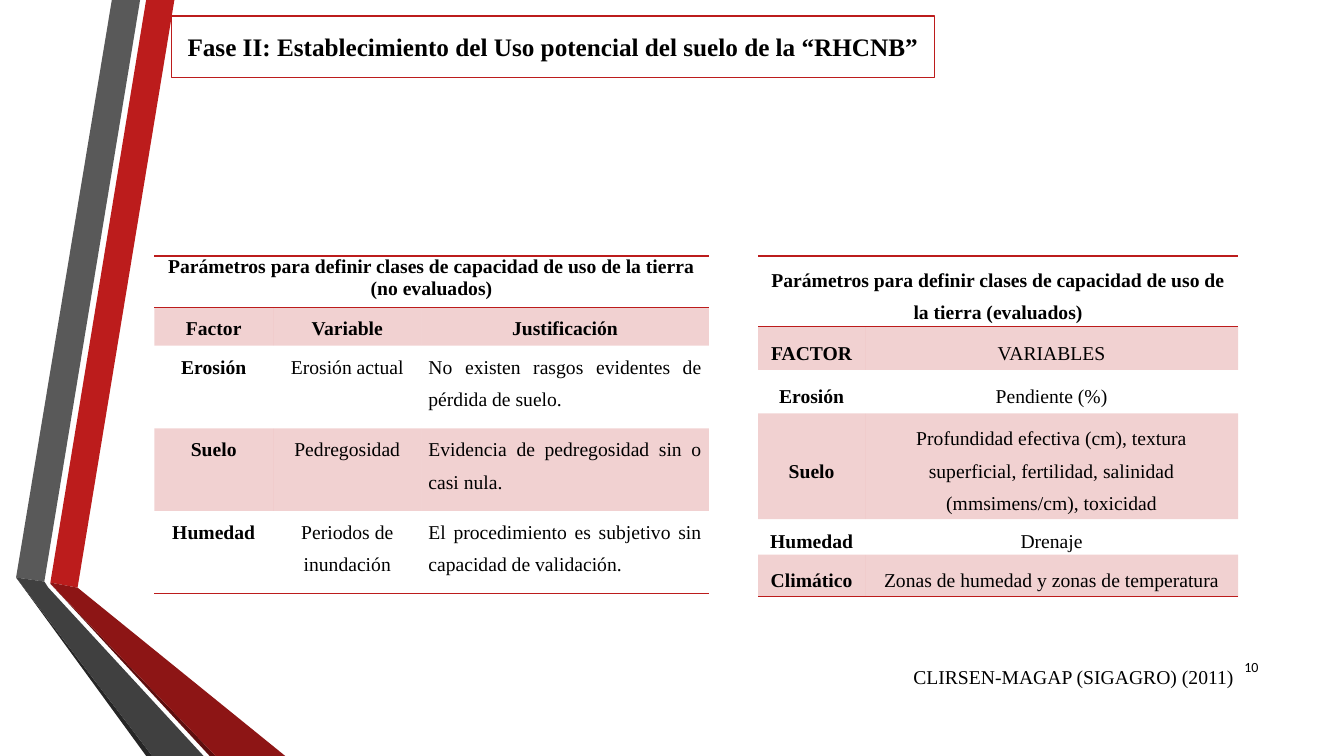
from dataclasses import dataclass
from lxml import etree
from pptx import Presentation
from pptx.dml.color import RGBColor
from pptx.enum.text import MSO_ANCHOR, MSO_AUTO_SIZE, PP_ALIGN
from pptx.oxml import parse_xml
from pptx.oxml.ns import nsdecls, qn
from pptx.util import Inches, Pt


@dataclass(frozen=True)
class Theme:
    red: str = "BC1C1C"
    dark_red: str = "8D1515"
    deep_red: str = "5E0E0E"
    grey: str = "595959"
    dark_grey: str = "404040"
    deep_grey: str = "262626"
    white: str = "FFFFFF"
    black: str = "000000"
    serif: str = "Times New Roman"
    sans: str = "Calibri"
    title_size: int = 18
    body_size: int = 14
    number_size: int = 10
    band_alpha: int = 20000
    plain_table: str = "{2D5ABB26-0587-4C30-8999-92F81FD0307C}"


class SlideMaker:
    def __init__(self, slide, theme):
        self.slide = slide
        self.theme = theme

    def set_text(self, frame, text, size, bold=False, align=PP_ALIGN.LEFT, font=None):
        frame.text = text
        paragraph = frame.paragraphs[0]
        paragraph.alignment = align
        paragraph.font.name = font or self.theme.serif
        paragraph.font.size = Pt(size)
        paragraph.font.bold = bold
        paragraph.font.color.rgb = RGBColor.from_string(self.theme.black)
        return paragraph

    def ribbon(self, colour, points):
        start, *rest = [(Inches(x), Inches(y)) for x, y in points]
        builder = self.slide.shapes.build_freeform(*start)
        builder.add_line_segments(rest, close=True)
        ribbon = builder.convert_to_shape()
        ribbon.shadow.inherit = False
        ribbon.fill.solid()
        ribbon.fill.fore_color.rgb = RGBColor.from_string(colour)
        ribbon.line.fill.background()

    def title(self, text, left, top, width, height):
        title = self.slide.shapes.title
        title.left, title.top = Inches(left), Inches(top)
        title.width, title.height = Inches(width), Inches(height)
        title.fill.solid()
        title.fill.fore_color.rgb = RGBColor.from_string(self.theme.white)
        title.line.color.rgb = RGBColor.from_string(self.theme.red)
        title.line.width = Pt(1.25)
        frame = title.text_frame
        frame.auto_size = MSO_AUTO_SIZE.NONE
        frame.vertical_anchor = MSO_ANCHOR.MIDDLE
        self.set_text(frame, text, self.theme.title_size, True, PP_ALIGN.CENTER)

    def label(self, text, left, top, width, height, size, wrap=True,
              anchor=MSO_ANCHOR.TOP, align=PP_ALIGN.LEFT, font=None):
        box = self.slide.shapes.add_textbox(
            Inches(left), Inches(top), Inches(width), Inches(height))
        frame = box.text_frame
        frame.word_wrap = wrap
        frame.vertical_anchor = anchor
        self.set_text(frame, text, size, align=align, font=font)

    def rule(self, cell, sides):
        for index, side in enumerate(sides):
            line = parse_xml(
                f'<a:{side} {nsdecls("a")} w="12700"><a:solidFill>'
                f'<a:srgbClr val="{self.theme.red}"/></a:solidFill></a:{side}>')
            cell._tc.get_or_add_tcPr().insert(index, line)

    def band(self, cell):
        cell.fill.solid()
        cell.fill.fore_color.rgb = RGBColor.from_string(self.theme.red)
        colour = cell._tc.tcPr.find(".//" + qn("a:srgbClr"))
        etree.SubElement(colour, qn("a:alpha"), val=str(self.theme.band_alpha))

    def table(self, heading, rows, left, top, widths, heights, anchor,
              bold_header, last_align, heading_spacing, heading_after):
        table = self.slide.shapes.add_table(
            len(heights), len(widths), Inches(left), Inches(top),
            Inches(sum(widths)), Inches(sum(heights))).table
        table.first_row = table.horz_banding = False
        table._tbl.tblPr.find(qn("a:tableStyleId")).text = self.theme.plain_table
        for column, width in zip(table.columns, widths):
            column.width = Inches(width)
        for row, height in zip(table.rows, heights):
            row.height = Inches(height)
        table.cell(0, 0).merge(table.cell(0, len(widths) - 1))

        last_row, last_column = len(heights) - 1, len(widths) - 1
        content = [[heading] + [""] * last_column] + rows
        for r, texts in enumerate(content):
            for c, text in enumerate(texts):
                cell = table.cell(r, c)
                cell.margin_left = cell.margin_right = Inches(0.07)
                cell.margin_top = cell.margin_bottom = 0
                cell.vertical_anchor = anchor
                if r % 2:
                    self.band(cell)
                else:
                    cell.fill.background()
                if r == 0:
                    self.rule(cell, ["lnT", "lnB"])
                elif r == last_row:
                    self.rule(cell, ["lnB"])
                if cell.is_spanned:
                    continue
                bold = c == 0 or (r == 1 and bold_header)
                align = last_align if r > 1 and c == last_column else PP_ALIGN.CENTER
                paragraph = self.set_text(
                    cell.text_frame, text, self.theme.body_size, bold, align)
                paragraph.line_spacing = 1.5 if r else heading_spacing
                paragraph.space_after = Pt(12 if r else heading_after)


def main():
    presentation = Presentation()
    presentation.slide_width = Inches(13.33)
    presentation.slide_height = Inches(7.5)
    slide = presentation.slides.add_slide(presentation.slide_layouts[5])
    theme = Theme()
    maker = SlideMaker(slide, theme)

    maker.ribbon(theme.red, [(0.5, 5.78), (0.77, 5.83), (1.73, 0), (1.45, 0)])
    maker.ribbon(theme.grey, [(1.39, 0), (1.11, 0), (0.16, 5.73), (0.44, 5.77)])
    maker.ribbon(theme.deep_grey, [(0.16, 5.73), (1.45, 7.5), (1.51, 7.5)])
    maker.ribbon(theme.deep_red, [(0.5, 5.79), (2.08, 7.5), (2.14, 7.5)])
    maker.ribbon(theme.dark_red, [(0.5, 5.79), (2.14, 7.5), (2.83, 7.5),
                                  (0.77, 5.83), (0.5, 5.78)])
    maker.ribbon(theme.dark_grey, [(2.02, 7.5), (0.48, 5.83), (0.44, 5.77),
                                   (0.16, 5.73), (1.51, 7.5)])

    maker.title("Fase II: Establecimiento del Uso potencial del suelo de la “RHCNB”",
                1.7, 0.16, 7.57, 0.61)
    maker.label("10", 11.98, 6.42, 0.6, 0.4, theme.number_size,
                anchor=MSO_ANCHOR.MIDDLE, align=PP_ALIGN.RIGHT, font=theme.sans)
    maker.label("CLIRSEN-MAGAP (SIGAGRO) (2011)", 8.96, 6.55, 3.4, 0.34,
                theme.body_size, wrap=False)

    maker.table(
        "Parámetros para definir clases de capacidad de uso de la tierra (no evaluados)",
        [["Factor", "Variable", "Justificación"],
         ["Erosión", "Erosión actual",
          "No existen rasgos evidentes de pérdida de suelo."],
         ["Suelo", "Pedregosidad", "Evidencia de pedregosidad sin o casi nula."],
         ["Humedad", "Periodos de inundación",
          "El procedimiento es subjetivo sin capacidad de validación."]],
        1.53, 2.54, [1.18, 1.47, 2.85], [0.51, 0.38] + [0.82] * 3,
        MSO_ANCHOR.TOP, True, PP_ALIGN.JUSTIFY, 1.0, 10)
    maker.table(
        "Parámetros para definir clases de capacidad de uso de la tierra (evaluados)",
        [["FACTOR", "VARIABLES"],
         ["Erosión", "Pendiente (%)"],
         ["Suelo", "Profundidad efectiva (cm), textura superficial, fertilidad, "
                   "salinidad (mmsimens/cm), toxicidad"],
         ["Humedad", "Drenaje"],
         ["Climático", "Zonas de humedad y zonas de temperatura"]],
        7.52, 2.54, [1.06, 3.7], [0.68, 0.43, 0.43, 1.04, 0.34, 0.42],
        MSO_ANCHOR.MIDDLE, False, PP_ALIGN.CENTER, 1.5, 12)

    presentation.save("out.pptx")


if __name__ == "__main__":
    main()
